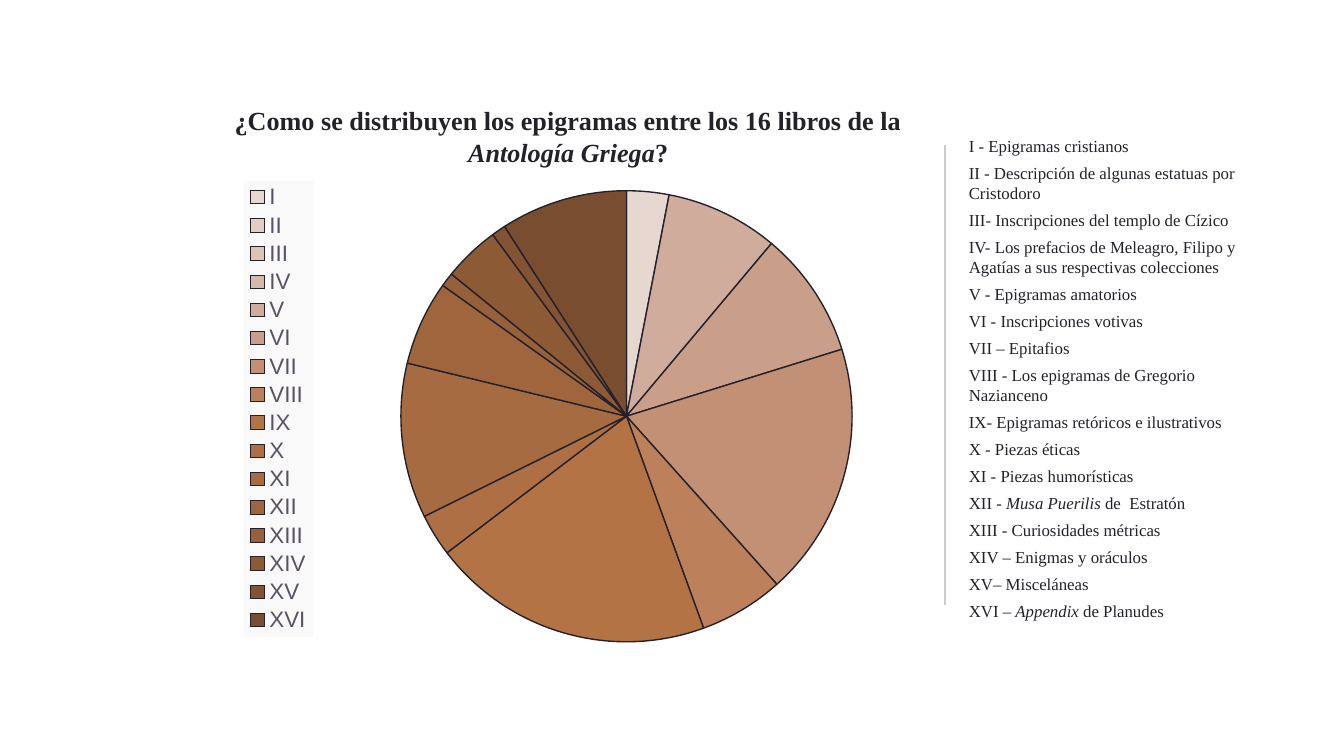
from dataclasses import dataclass

from lxml.etree import SubElement
from pptx import Presentation
from pptx.chart.data import CategoryChartData
from pptx.dml.color import RGBColor
from pptx.enum.chart import XL_CHART_TYPE, XL_LEGEND_POSITION
from pptx.enum.shapes import MSO_CONNECTOR
from pptx.enum.text import PP_ALIGN
from pptx.oxml import parse_xml
from pptx.oxml.ns import nsdecls, qn
from pptx.util import Cm, Pt

INK = "25212A"
TITLE_FORMAT = {"name": "Times New Roman", "size": Pt(14), "bold": True}
BOOK_FORMAT = {"name": "Times New Roman", "size": Pt(9)}
CHART_FORMAT = {"name": "Arial", "size": Pt(10)}
LEGEND_FORMAT = {"name": "Arial", "size": Pt(12)}


@dataclass(frozen=True)
class Span:
    text: str
    italic: bool = False


@dataclass(frozen=True)
class Area:
    left: float
    top: float
    width: float
    height: float

    def lengths(self) -> list:
        return [Cm(value) for value in (self.left, self.top, self.width, self.height)]


@dataclass(frozen=True)
class Slice:
    book: str
    percent: int
    color: str


TITLE = [
    Span("¿Como se distribuyen los epigramas entre los 16 libros de la "),
    Span("Antología Griega", True),
    Span("?"),
]

BOOKS = [
    [Span("I - Epigramas cristianos")],
    [Span("II - Descripción de algunas estatuas por Cristodoro")],
    [Span("III- Inscripciones del templo de Cízico")],
    [Span("IV- Los prefacios de Meleagro, Filipo y Agatías a sus respectivas colecciones")],
    [Span("V - Epigramas amatorios")],
    [Span("VI - Inscripciones votivas")],
    [Span("VII – Epitafios")],
    [Span("VIII - Los epigramas de Gregorio Nazianceno")],
    [Span("IX- Epigramas retóricos e ilustrativos")],
    [Span("X - Piezas éticas")],
    [Span("XI - Piezas humorísticas")],
    [Span("XII -"), Span(" Musa Puerilis ", True), Span("de  Estratón")],
    [Span("XIII - Curiosidades métricas")],
    [Span("XIV – Enigmas y oráculos")],
    [Span("XV– Misceláneas")],
    [Span("XVI – "), Span("Appendix", True), Span(" de Planudes")],
]

SLICES = [
    Slice("I", 3, "E7D7D1"),
    Slice("II", 0, "E1CEC5"),
    Slice("III", 0, "DCC4B9"),
    Slice("IV", 0, "D6B9AC"),
    Slice("V", 8, "CFAC9B"),
    Slice("VI", 9, "C99F8A"),
    Slice("VII", 18, "C29075"),
    Slice("VIII", 6, "BC805A"),
    Slice("IX", 20, "B47345"),
    Slice("X", 3, "AD6F43"),
    Slice("XI", 11, "A66B40"),
    Slice("XII", 6, "9F663D"),
    Slice("XIII", 1, "95603A"),
    Slice("XIV", 4, "8D5A36"),
    Slice("XV", 1, "835433"),
    Slice("XVI", 9, "794D2F"),
]


def color(value: str) -> RGBColor:
    return RGBColor.from_string(value)


def set_font(font, values: dict, ink: str = INK) -> None:
    for name, value in values.items():
        setattr(font, name, value)
    font.color.rgb = color(ink)


def add_text_box(page, area: Area, top_inset: float):
    frame = page.shapes.add_textbox(*area.lengths()).text_frame
    insets = {"margin_left": 0.25, "margin_right": 0.25,
              "margin_top": top_inset, "margin_bottom": 0.25}
    for name, value in insets.items():
        setattr(frame, name, Cm(value))
    frame.word_wrap = True
    return frame


def add_spans(para, spans: list[Span], values: dict) -> None:
    for span in spans:
        run = para.add_run()
        run.text = span.text
        set_font(run.font, values | {"italic": span.italic})


def add_title(page) -> None:
    frame = add_text_box(page, Area(4.06, 1.73, 13.36, 1.45), 0.25)
    para = frame.paragraphs[0]
    para.alignment = PP_ALIGN.CENTER
    add_spans(para, TITLE, TITLE_FORMAT)


def add_books(page) -> None:
    frame = add_text_box(page, Area(17.42, 1.73, 6.43, 11.56), 0.84)
    for index, spans in enumerate(BOOKS):
        para = frame.add_paragraph() if index else frame.paragraphs[0]
        properties = para._p.get_or_add_pPr()
        properties.set("marL", str(Cm(0.64)))
        properties.set("indent", "0")
        para.space_before = Pt(3.6 if index else 0)
        add_spans(para, spans, BOOK_FORMAT)


def add_divider(page) -> None:
    ends = [Cm(value) for value in (17.86, 2.74, 17.86, 11.43)]
    divider = page.shapes.add_connector(MSO_CONNECTOR.STRAIGHT, *ends)
    divider.line.color.rgb = color("CCCCCC")
    divider.line.width = Pt(0.75)
    SubElement(divider._element.spPr, qn("a:effectLst"))


def make_layout(area: Area, inner: bool):
    target = '<c:layoutTarget val="inner"/>' if inner else ""
    modes = '<c:xMode val="edge"/><c:yMode val="edge"/>'
    sizes = {"x": area.left, "y": area.top, "w": area.width, "h": area.height}
    places = "".join(f'<c:{name} val="{value}"/>' for name, value in sizes.items())
    return parse_xml(
        f'<c:layout {nsdecls("c")}><c:manualLayout>{target}{modes}{places}'
        "</c:manualLayout></c:layout>"
    )


def clear_layout(element) -> None:
    for layout in element.findall(qn("c:layout")):
        element.remove(layout)


def format_legend(chart) -> None:
    chart.has_legend = True
    legend = chart.legend
    legend.position = XL_LEGEND_POSITION.RIGHT
    legend.include_in_layout = False
    set_font(legend.font, LEGEND_FORMAT, "5B5167")
    element = legend._element
    clear_layout(element)
    element.find(qn("c:legendPos")).addnext(make_layout(Area(0.15, 0.04, 0.08, 0.93), False))
    element.find(qn("c:overlay")).addnext(parse_xml(
        f'<c:spPr {nsdecls("c", "a")}><a:solidFill><a:srgbClr val="F9F9F9"/>'
        "</a:solidFill></c:spPr>"
    ))


def add_pie(page) -> None:
    data = CategoryChartData()
    data.categories = [item.book for item in SLICES]
    data.add_series("Series 1", [item.percent for item in SLICES])
    area = Area(2.13, 3.05, 16.46, 9.27)
    chart = page.shapes.add_chart(XL_CHART_TYPE.PIE, *area.lengths(), data).chart
    chart.has_title = False
    set_font(chart.font, CHART_FORMAT)
    plot = chart.plots[0]
    plot.vary_by_categories = True
    for index, item in enumerate(SLICES):
        style = plot.series[0].points[index].format
        style.fill.solid()
        style.fill.fore_color.rgb = color(item.color)
        style.line.color.rgb = color(INK)
        style.line.width = Pt(0.75)
    plot_area = chart._chartSpace.chart.plotArea
    clear_layout(plot_area)
    plot_area.insert(0, make_layout(Area(0.33, 0.06, 0.52, 0.92), True))
    format_legend(chart)


def main() -> None:
    deck = Presentation()
    deck.slide_width, deck.slide_height = Cm(25.4), Cm(14.29)
    page = deck.slides.add_slide(deck.slide_layouts[6])
    add_divider(page)
    add_books(page)
    add_pie(page)
    add_title(page)
    deck.save("out.pptx")


if __name__ == "__main__":
    main()
